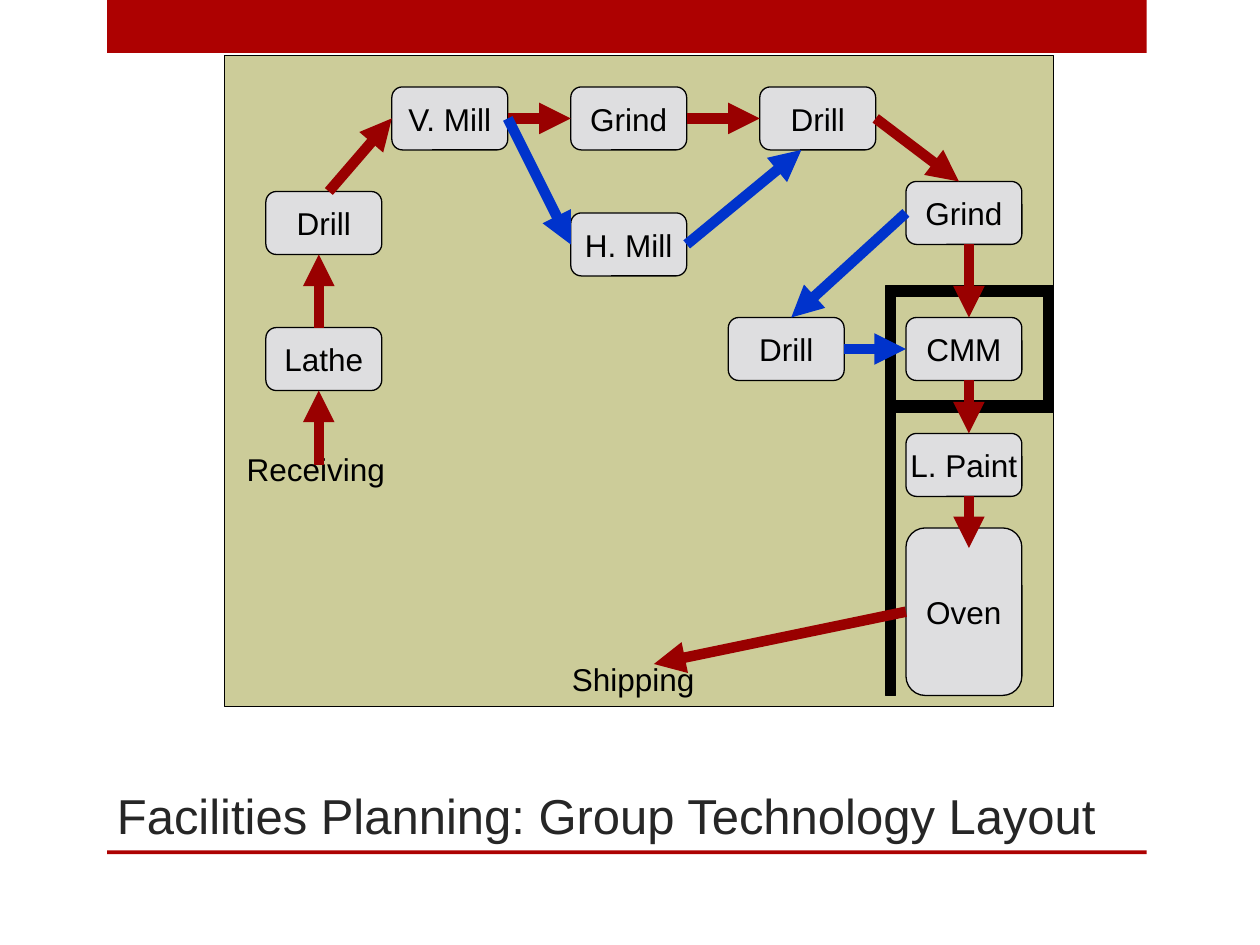
from dataclasses import dataclass

from lxml.etree import SubElement
from pptx import Presentation
from pptx.dml.color import RGBColor
from pptx.enum.shapes import MSO_CONNECTOR, MSO_SHAPE
from pptx.enum.text import MSO_ANCHOR, PP_ALIGN
from pptx.oxml.ns import qn
from pptx.util import Inches, Pt


@dataclass(frozen=True)
class Theme:
    font: str = "Arial"
    title_size: int = 28
    label_size: int = 18
    outline_width: float = 0.75
    arrow_width: float = 6
    accent: str = "AD0101"
    title: str = "262626"
    black: str = "000000"
    floor: str = "CCCC99"
    station: str = "DEDEE0"
    red_route: str = "990000"
    blue_route: str = "0033CC"


THEME = Theme()
LEFT, BOTTOM, RIGHT = 1, 2, 3
STATION_WIDTH, STATION_HEIGHT = 0.92, 0.5

# key: (text, left, top, height)
STATIONS = {
    "top drill": ("Drill", 6.03, 0.69, STATION_HEIGHT),
    "vertical mill": ("V. Mill", 3.11, 0.69, STATION_HEIGHT),
    "top grind": ("Grind", 4.53, 0.69, STATION_HEIGHT),
    "horizontal mill": ("H. Mill", 4.53, 1.69, STATION_HEIGHT),
    "left drill": ("Drill", 2.11, 1.52, STATION_HEIGHT),
    "lathe": ("Lathe", 2.11, 2.6, STATION_HEIGHT),
    "right grind": ("Grind", 7.19, 1.44, STATION_HEIGHT),
    "lower drill": ("Drill", 5.78, 2.52, STATION_HEIGHT),
    "measuring": ("CMM", 7.19, 2.52, STATION_HEIGHT),
    "paint": ("L. Paint", 7.19, 3.44, STATION_HEIGHT),
    "oven": ("Oven", 7.19, 4.19, 1.33),
}

# Each end is a point (x, y) or a joined side (station key, side).
RED_ARROWS = [
    ((2.53, 3.69), (2.53, 3.1)),
    ((2.53, 2.6), (2.53, 2.02)),
    ((2.61, 1.52), ("vertical mill", LEFT)),
    (("vertical mill", RIGHT), ("top grind", LEFT)),
    (("top grind", RIGHT), ("top drill", LEFT)),
    (("top drill", RIGHT), (7.61, 1.44)),
    ((7.69, 1.94), (7.69, 2.52)),
    ((7.69, 3.02), (7.69, 3.44)),
    ((7.69, 3.94), (7.69, 4.35)),
    (("oven", LEFT), (5.19, 5.27)),
]
BLUE_ARROWS = [
    (("vertical mill", RIGHT), ("horizontal mill", LEFT)),
    (("horizontal mill", RIGHT), (6.36, 1.19)),
    (("right grind", LEFT), (6.28, 2.52)),
    (("lower drill", RIGHT), ("measuring", LEFT)),
]


def write_text(frame, text, *, size=THEME.label_size, color=THEME.black,
               align=PP_ALIGN.LEFT, anchor=MSO_ANCHOR.TOP, wrap=True):
    frame.word_wrap = wrap
    frame.vertical_anchor = anchor
    paragraph = frame.paragraphs[0]
    paragraph.alignment = align
    run = paragraph.add_run()
    run.text = text
    run.font.name = THEME.font
    run.font.size = Pt(size)
    run.font.color.rgb = RGBColor.from_string(color)


def add_block(slide, box, fill, *, kind=MSO_SHAPE.RECTANGLE, outlined=True):
    shape = slide.shapes.add_shape(kind, *map(Inches, box))
    shape.shadow.inherit = False
    shape.fill.solid()
    shape.fill.fore_color.rgb = RGBColor.from_string(fill)
    if outlined:
        shape.line.color.rgb = RGBColor.from_string(THEME.black)
        shape.line.width = Pt(THEME.outline_width)
    else:
        shape.line.fill.background()
    return shape


def add_label(slide, box, text, **text_format):
    label = slide.shapes.add_textbox(*map(Inches, box))
    write_text(label.text_frame, text, **text_format)


def add_station(slide, text, left, top, height):
    station = add_block(slide, (left, top, STATION_WIDTH, height),
                        THEME.station, kind=MSO_SHAPE.ROUNDED_RECTANGLE)
    station.adjustments[0] = 0.167
    write_text(station.text_frame, text, align=PP_ALIGN.CENTER,
               anchor=MSO_ANCHOR.MIDDLE, wrap=False)
    return station


def add_arrow(slide, stations, start, end, color):
    """Draw an arrow, joining each end that names a station side."""
    arrow = slide.shapes.add_connector(MSO_CONNECTOR.STRAIGHT, 0, 0, 0, 0)
    if start[0] in stations:
        arrow.begin_connect(stations[start[0]], start[1])
    else:
        arrow.begin_x, arrow.begin_y = map(Inches, start)
    if end[0] in stations:
        arrow.end_connect(stations[end[0]], end[1])
    else:
        arrow.end_x, arrow.end_y = map(Inches, end)
    arrow.line.color.rgb = RGBColor.from_string(color)
    arrow.line.width = Pt(THEME.arrow_width)
    properties = arrow.element.spPr
    SubElement(properties.find(qn("a:ln")), qn("a:tailEnd"), type="triangle")
    SubElement(properties, qn("a:effectLst"))


def add_frame(slide):
    for top, height in ((0, 0.42), (6.75, 0.03)):
        add_block(slide, (0.85, top, 8.25, height), THEME.accent, outlined=False)
    add_label(slide, (0.83, 5.8, 8.26, 0.95),
              "Facilities Planning: Group Technology Layout",
              size=THEME.title_size, color=THEME.title, anchor=MSO_ANCHOR.BOTTOM)


def add_floor_plan(slide):
    add_block(slide, (1.78, 0.44, 6.58, 5.17), THEME.floor)
    add_block(slide, (7.03, 2.27, 1.33, 1), THEME.black)
    add_block(slide, (7.11, 2.35, 1.17, 0.83), THEME.floor)
    add_block(slide, (7.03, 3.27, 0.08, 2.25), THEME.black)
    add_block(slide, (7.03, 3.19, 1.33, 0.08), THEME.black)


def main():
    presentation = Presentation()
    presentation.slide_width = Inches(10)
    presentation.slide_height = Inches(7.5)
    slide = presentation.slides.add_slide(presentation.slide_layouts[6])

    add_frame(slide)
    add_floor_plan(slide)
    stations = {key: add_station(slide, *station)
                for key, station in STATIONS.items()}
    add_label(slide, (1.86, 3.52, 1.42, 0.4), "Receiving")
    add_label(slide, (4.44, 5.19, 1.42, 0.4), "Shipping")
    for color, arrows in ((THEME.red_route, RED_ARROWS),
                          (THEME.blue_route, BLUE_ARROWS)):
        for start, end in arrows:
            add_arrow(slide, stations, start, end, color)

    presentation.save("out.pptx")


if __name__ == "__main__":
    main()
